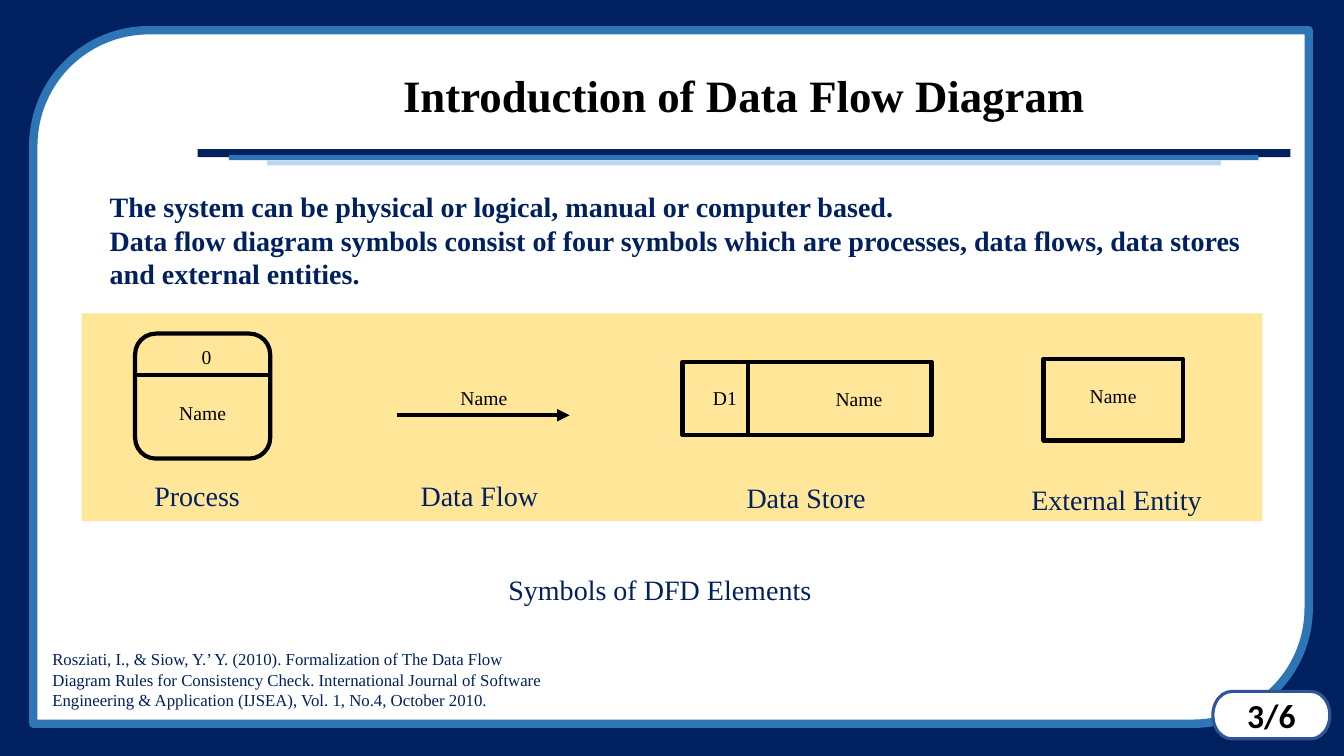
from lxml.etree import SubElement
from pptx import Presentation
from pptx.dml.color import RGBColor
from pptx.enum.shapes import MSO_CONNECTOR, MSO_SHAPE
from pptx.enum.text import MSO_ANCHOR, MSO_AUTO_SIZE, PP_ALIGN
from pptx.oxml.ns import qn
from pptx.util import Inches, Pt

NAVY = RGBColor(0x00, 0x20, 0x60)
BLUE = RGBColor(0x2E, 0x75, 0xB6)
PALE_BLUE = RGBColor(0xBD, 0xD7, 0xEE)
BADGE_BLUE = RGBColor(0x2F, 0x55, 0x97)
SAND = RGBColor(0xFF, 0xE6, 0x99)
WHITE = RGBColor(0xFF, 0xFF, 0xFF)
BLACK = RGBColor(0x00, 0x00, 0x00)
SERIF = "Times New Roman"

TITLE = "Introduction of Data Flow Diagram"
INTRO = [
    "The system can be physical or logical, manual or computer based.",
    "Data flow diagram symbols consist of four symbols which are processes, "
    "data flows, data stores and external entities.",
]
FIGURE_CAPTION = "Symbols of DFD Elements"
CITATION = (
    "Rosziati, I., & Siow, Y.’ Y. (2010). Formalization of The Data Flow "
    "Diagram Rules for Consistency Check. International Journal of Software "
    "Engineering & Application (IJSEA), Vol. 1, No.4, October 2010."
)
PAGE = "3/6"

TITLE_RULES = [
    (1.96, 1.48, 10.84, 0.08, NAVY),
    (2.27, 1.54, 10.21, 0.05, BLUE),
    (2.65, 1.59, 9.46, 0.05, PALE_BLUE),
]
SYMBOL_OUTLINES = [
    (MSO_SHAPE.ROUNDED_RECTANGLE, (1.34, 3.31, 1.34, 1.24)),
    (MSO_SHAPE.RECTANGLE, (6.77, 3.59, 2.47, 0.73)),
    (MSO_SHAPE.RECTANGLE, (10.35, 3.56, 1.38, 0.81)),
]
SYMBOL_LINES = [
    (1.36, 3.72, 2.69, 3.72, False),
    (3.94, 4.12, 5.65, 4.12, True),
    (7.42, 3.59, 7.42, 4.31, False),
]
SYMBOL_LABELS = [
    ("0", 1.4, 3.37),
    ("Name", 1.36, 3.93),
    ("Name", 4.15, 3.78),
    ("D1", 6.54, 3.78),
    ("Name", 7.87, 3.79),
    ("Name", 10.39, 3.76),
]
SYMBOL_CAPTIONS = [
    ("Process", 1.01, 4.53),
    ("Data Flow", 3.81, 4.53),
    ("Data Store", 7.05, 4.55),
    ("External Entity", 10.13, 4.57),
]


def inches(*lengths):
    return [Inches(length) for length in lengths]


def format_paragraph(paragraph, size, color, bold=False, font=SERIF,
                     align=PP_ALIGN.CENTER, spacing=None):
    paragraph.alignment = align
    if spacing:
        paragraph.line_spacing = spacing
    paragraph.font.name = font
    paragraph.font.size = Pt(size)
    paragraph.font.bold = bold
    paragraph.font.color.rgb = color


def add_box(slide, kind, place, fill=None, line=None, width=3):
    box = slide.shapes.add_shape(kind, *inches(*place))
    box.shadow.inherit = False
    if fill is None:
        box.fill.background()
    else:
        box.fill.solid()
        box.fill.fore_color.rgb = fill
    if line is None:
        box.line.fill.background()
    else:
        box.line.color.rgb = line
        box.line.width = Pt(width)
    return box


def add_text(slide, lines, place, size, color, **style):
    frame = slide.shapes.add_textbox(*inches(*place)).text_frame
    frame.word_wrap = True
    frame.auto_size = MSO_AUTO_SIZE.SHAPE_TO_FIT_TEXT
    frame.text = "\n".join(lines)
    for paragraph in frame.paragraphs:
        format_paragraph(paragraph, size, color, **style)


def add_line(slide, ends, arrow):
    line = slide.shapes.add_connector(MSO_CONNECTOR.STRAIGHT, *inches(*ends))
    line.line.color.rgb = BLACK
    line.line.width = Pt(3)
    properties = line.element.spPr
    if arrow:
        SubElement(properties.find(qn("a:ln")), qn("a:tailEnd"), type="triangle")
    SubElement(properties, qn("a:effectLst"))


def add_frame(slide):
    add_box(slide, MSO_SHAPE.RECTANGLE, (0, 0, 13.33, 7.5), NAVY)
    add_box(slide, MSO_SHAPE.ROUND_2_DIAG_RECTANGLE,
            (0.33, 0.3, 12.65, 6.88), WHITE, BLUE, 6)
    for *place, color in TITLE_RULES:
        add_box(slide, MSO_SHAPE.RECTANGLE, place, color)


def place_title(slide):
    title = slide.shapes.title
    slide.shapes[-1].element.addnext(title.element)
    title.left, title.top, title.width, title.height = inches(1.96, 0.49, 10.84, 0.97)
    title.text_frame.text = TITLE
    title.text_frame.vertical_anchor = MSO_ANCHOR.MIDDLE
    format_paragraph(title.text_frame.paragraphs[0], 32, BLACK, bold=True, spacing=0.9)


def add_symbols(slide):
    add_box(slide, MSO_SHAPE.RECTANGLE, (0.81, 3.11, 11.71, 2.06), SAND)
    for kind, place in SYMBOL_OUTLINES:
        add_box(slide, kind, place, line=BLACK)
    for *ends, arrow in SYMBOL_LINES:
        add_line(slide, ends, arrow)
    for label, left, top in SYMBOL_LABELS:
        add_text(slide, [label], (left, top, 1.3, 0.34), 14, BLACK)
    for caption, left, top in SYMBOL_CAPTIONS:
        add_text(slide, [caption], (left, top, 1.89, 0.54), 20, NAVY, spacing=1.5)


def add_page_badge(slide):
    badge = add_box(slide, MSO_SHAPE.FLOWCHART_TERMINATOR,
                    (12.03, 6.86, 1.16, 0.47), WHITE, BADGE_BLUE, 2.25)
    badge.text_frame.text = PAGE
    badge.text_frame.vertical_anchor = MSO_ANCHOR.MIDDLE
    format_paragraph(badge.text_frame.paragraphs[0], 24, BLACK, bold=True, font="Calibri")


def main():
    deck = Presentation()
    deck.slide_width, deck.slide_height = inches(13.33, 7.5)
    slide = deck.slides.add_slide(deck.slide_layouts.get_by_name("Title Only"))
    add_frame(slide)
    place_title(slide)
    add_text(slide, INTRO, (0.99, 1.83, 11.73, 1.11), 20, NAVY,
             bold=True, align=PP_ALIGN.LEFT)
    add_symbols(slide)
    add_text(slide, [FIGURE_CAPTION], (3.62, 5.46, 5.85, 0.54), 20, NAVY, spacing=1.5)
    add_text(slide, [CITATION], (0.42, 6.39, 5.21, 0.71), 12, NAVY, align=PP_ALIGN.LEFT)
    add_page_badge(slide)
    deck.save("out.pptx")


if __name__ == "__main__":
    main()
